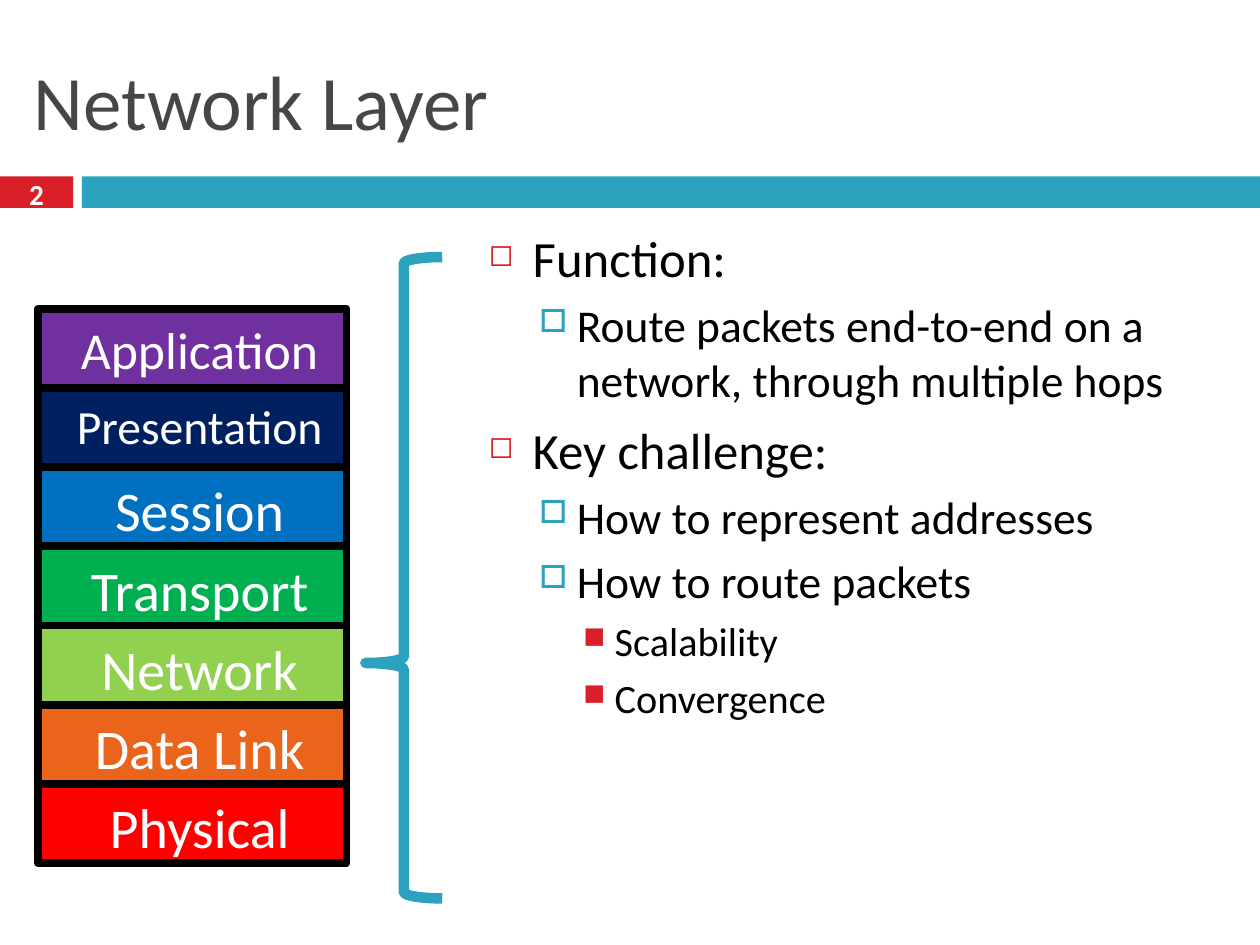
from lxml.etree import SubElement
from pptx import Presentation
from pptx.dml.color import RGBColor
from pptx.enum.shapes import MSO_SHAPE as Kind
from pptx.enum.text import MSO_ANCHOR as Anchor, PP_ALIGN as Align
from pptx.oxml.ns import qn
from pptx.util import Inches, Pt

WIDE, HIGH = 10, 7.5
FONT = "Calibri"
HUES = {
    "red": "DA1F28", "teal": "2DA2BF", "gray": "464646",
    "white": "FFFFFF", "black": "000000",
}
LAYERS = [
    ("Application", "7030A0", 29.6),
    ("Presentation", "002060", 27.2),
    ("Session", "0070C0", 32),
    ("Transport", "00B050", 32),
    ("Network", "92D050", 32),
    ("Data Link", "EB641B", 32),
    ("Physical", "FF0000", 32),
]
# Per level: text size, space before, left margin, hang, bullet, hue, bullet %
LEVELS = [
    (29, 7, 0.35, 0.35, "◻", "red", 60),
    (26, 5.5, 0.7, 0.3, "□", "teal", 70),
    (23, 5, 1, 0.25, "■", "red", 75),
]
POINTS = [
    (0, "Function:"),
    (1, "Route packets end-to-end on a network, through multiple hops"),
    (0, "Key challenge:"),
    (1, "How to represent addresses"),
    (1, "How to route packets"),
    (2, "Scalability"),
    (2, "Convergence"),
]


def color(hue):
    return RGBColor.from_string(HUES.get(hue, hue))


def style(para, size, hue, bold=False):
    for run in para.runs:
        font = run.font
        font.name, font.size, font.bold = FONT, Pt(size), bold
        font.color.rgb = color(hue)


def add_shape(slide, kind, box, fill=None, line=None, width=0):
    shape = slide.shapes.add_shape(kind, *map(Inches, box))
    shape.shadow.inherit = False
    if fill:
        shape.fill.solid()
        shape.fill.fore_color.rgb = color(fill)
    else:
        shape.fill.background()
    if line:
        shape.line.color.rgb = color(line)
        shape.line.width = Pt(width)
    else:
        shape.line.fill.background()
    return shape


def add_text(slide, box, anchor=Anchor.TOP):
    frame = slide.shapes.add_textbox(*map(Inches, box)).text_frame
    frame.word_wrap = True
    frame.vertical_anchor = anchor
    return frame


def add_label(slide, box, text, size, hue, align=Align.LEFT, bold=False):
    frame = add_text(slide, box, Anchor.MIDDLE)
    frame.text = text
    para = frame.paragraphs[0]
    para.alignment = align
    style(para, size, hue, bold)


def indent(para, left, hang=0):
    props = para._p.get_or_add_pPr()
    props.set("marL", str(Inches(left)))
    props.set("indent", str(-Inches(hang)))
    return props


def add_points(slide, box):
    frame = add_text(slide, box)
    for num, (level, text) in enumerate(POINTS):
        size, gap, left, hang, mark, hue, share = LEVELS[level]
        para = frame.add_paragraph() if num else frame.paragraphs[0]
        para.text = text
        para.level = level
        para.space_before = Pt(gap)
        style(para, size, "black")
        props = indent(para, left, hang)
        tint = SubElement(props, qn("a:buClr"))
        SubElement(tint, qn("a:srgbClr"), val=HUES[hue])
        SubElement(props, qn("a:buSzPct"), val=str(share * 1000))
        SubElement(props, qn("a:buChar"), char=mark)


def add_stack(slide, left, top, width, step):
    """Draw the layers as equal boxes, one below the other."""
    for row, (name, fill, size) in enumerate(LAYERS):
        box = (left, top + row * step, width, step)
        frame = add_shape(slide, Kind.RECTANGLE, box, fill, "black", 4.5).text_frame
        frame.vertical_anchor = Anchor.TOP
        frame.margin_top = Inches(0.07)
        frame.word_wrap = True
        frame.text = name
        para = frame.paragraphs[0]
        para.alignment = Align.CENTER
        indent(para, 0.12)
        style(para, size, "white")


def add_band(slide, top, high, tab, start):
    add_shape(slide, Kind.RECTANGLE, (0, top, tab, high), "red")
    add_shape(slide, Kind.RECTANGLE, (start, top, WIDE - start, high), "teal")
    add_label(slide, (0, top - 0.03, tab, 0.33), "2", 16.6, "white",
              Align.CENTER, True)


def add_brace(slide, box):
    brace = add_shape(slide, Kind.LEFT_BRACE, box, None, "teal", 6)
    brace.adjustments[0] = 0.083
    brace.adjustments[1] = 0.633


def main():
    deck = Presentation()
    deck.slide_width, deck.slide_height = Inches(WIDE), Inches(HIGH)
    slide = deck.slides.add_slide(deck.slide_layouts[6])
    add_band(slide, 1.4, 0.25, 0.58, 0.65)
    add_label(slide, (0.17, 0.25, 9.67, 1.08), "Network Layer", 44, "gray")
    add_points(slide, (3.78, 1.75, 6.06, 5.58))
    add_stack(slide, 0.3, 2.45, 2.45, 4.4 / len(LAYERS))
    add_brace(slide, (2.9, 2.04, 0.61, 5.09))
    deck.save("out.pptx")


if __name__ == "__main__":
    main()
